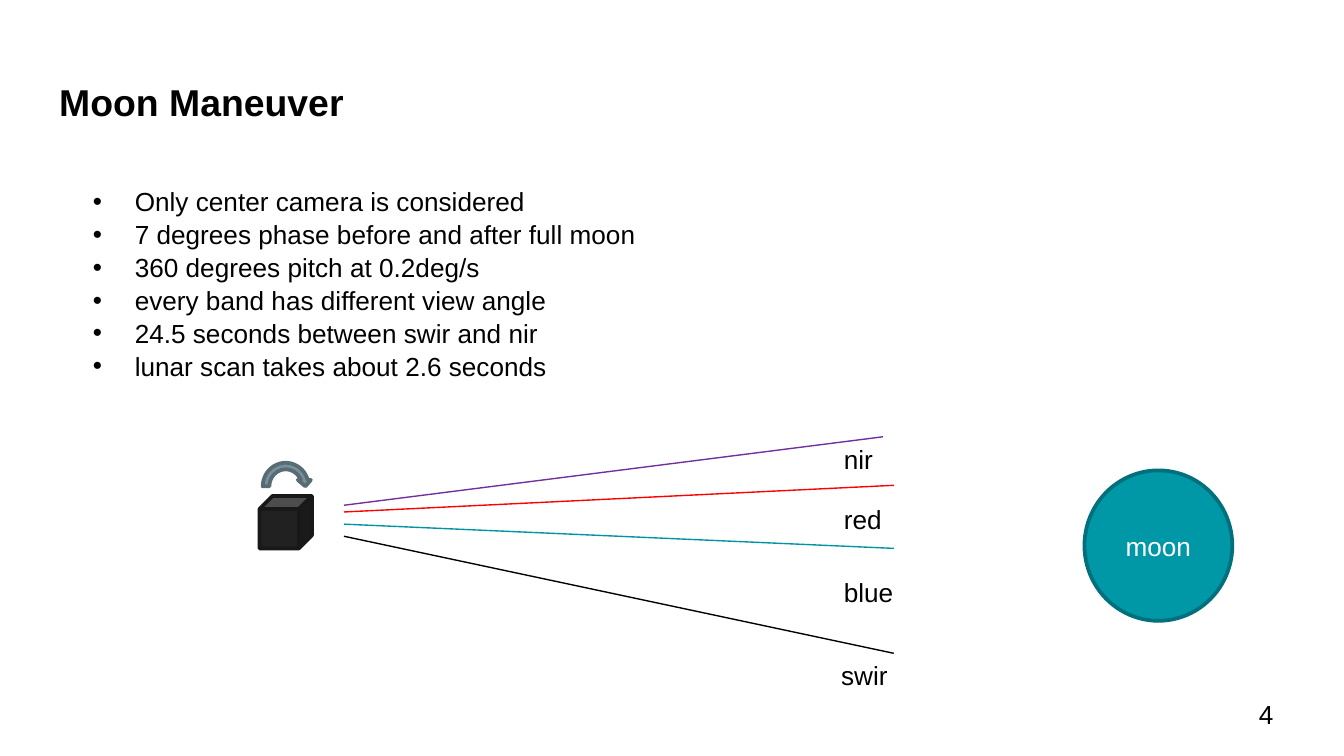
import pptx
import pptx.util
import pptx.dml.color
import pptx.enum.shapes
import pptx.enum.text
import pptx.oxml
import pptx.oxml.ns

Pt = pptx.util.Pt
RGB = pptx.dml.color.RGBColor.from_string
SHAPE = pptx.enum.shapes.MSO_SHAPE
ALIGN = pptx.enum.text.PP_ALIGN
ANCHOR = pptx.enum.text.MSO_ANCHOR

# Content: positions are (left, top, width, height) in points
COLORS = {
    "black": "000000", "white": "FFFFFF",
    "moon": "0097A7", "moon_edge": "00707C",
    "camera": "212121", "camera_edge": "181818",
    "turn": "78909C", "turn_edge": "596B73",
    "nir": "7030A0", "red": "FF0000", "blue": "0094A3", "swir": "000000",
}
TITLE = "Moon Maneuver"
BULLETS = [
    "Only center camera is considered",
    "7 degrees phase before and after full moon",
    "360 degrees pitch at 0.2deg/s",
    "every band has different view angle",
    "24.5 seconds between swir and nir",
    "lunar scan takes about 2.6 seconds",
]
PAGE = "4"
SHAPES = [  # kind, box, colour, text
    (SHAPE.OVAL, (581, 252, 79.2, 80.6), "moon", "moon"),
    (SHAPE.CUBE, (139, 265.7, 28.1, 28.1), "camera", ""),
    (SHAPE.CIRCULAR_ARROW, (139, 246.2, 28.1, 28.8), "turn", ""),
]
RAY_START = 184.3
RAYS = [  # band, start y, end x, end y, label left, label top
    ("nir", 270.7, 473, 234, 445, 234),
    ("red", 274.3, 478.8, 260, 445, 266.4),
    ("blue", 280.8, 478.8, 293.8, 445, 305.3),
    ("swir", 287.3, 478.8, 350, 443.5, 350),
]


def place(sp, box):
    for name, value in zip(("left", "top", "width", "height"), box):
        setattr(sp, name, Pt(value))


def write(sp, lines, size=14, color="black", bold=False, align=ALIGN.LEFT,
          anchor=ANCHOR.TOP, inset=(7.2, 3.6), spacing=1.0):
    tf = sp.text_frame
    x, y = map(Pt, inset)
    frame = {"word_wrap": True, "auto_size": pptx.enum.text.MSO_AUTO_SIZE.NONE,
             "vertical_anchor": anchor, "margin_left": x, "margin_right": x,
             "margin_top": y, "margin_bottom": y}
    for name, value in frame.items():
        setattr(tf, name, value)
    tf.text = "\n".join(lines)
    para = {"alignment": align, "space_before": Pt(0), "space_after": Pt(0),
            "line_spacing": spacing}
    font = {"name": "Arial", "size": Pt(size), "bold": bold}
    for p in tf.paragraphs:
        for name, value in para.items():
            setattr(p, name, value)
        for r in p.runs:
            for name, value in font.items():
                setattr(r.font, name, value)
            r.font.color.rgb = RGB(COLORS[color])


def add_text(s, box, text, **fmt):
    sp = s.shapes.add_textbox(0, 0, 0, 0)
    place(sp, box)
    write(sp, [text], **fmt)


prs = pptx.Presentation()
prs.slide_width, prs.slide_height = Pt(720), Pt(405)
s = prs.slides.add_slide(prs.slide_layouts[1])

# Title and bullet list
title, body = s.placeholders
place(title, (24.5, 35.3, 671, 45.4))
write(title, [TITLE], size=20, bold=True, inset=(7.2, 7.2))
place(body, (42.5, 95, 306, 143.3))
write(body, BULLETS, spacing=1.05)
for p in body.text_frame.paragraphs:
    pPr = p._p.get_or_add_pPr()
    pPr.set("marL", str(Pt(22.5)))
    pPr.set("indent", str(-Pt(22.5)))
    bullet = pptx.oxml.ns.qn("a:buChar")
    pPr.append(pptx.oxml.parse_xml(
        f'<a:buFont {pptx.oxml.ns.nsdecls("a")} typeface="Arial"/>'))
    pPr.makeelement(bullet)
    pPr.append(pptx.oxml.parse_xml(
        f'<a:buChar {pptx.oxml.ns.nsdecls("a")} char="•"/>'))

# Page number
add_text(s, (667.4, 367.2, 43.2, 31), PAGE, anchor=ANCHOR.MIDDLE,
         inset=(7.2, 7.2))

# Moon, camera and turning arrow
for kind, box, color, text in SHAPES:
    sp = s.shapes.add_shape(kind, 0, 0, 0, 0)
    place(sp, box)
    sp.shadow.inherit = False
    sp.fill.solid()
    sp.fill.fore_color.rgb = RGB(COLORS[color])
    sp.line.color.rgb = RGB(COLORS[color + "_edge"])
    sp.line.width = Pt(2)
    if text:
        write(sp, [text], color="white", align=ALIGN.CENTER,
              anchor=ANCHOR.MIDDLE)

# View rays with band labels
for band, y1, x2, y2, left, top in RAYS:
    ray = s.shapes.add_connector(pptx.enum.shapes.MSO_CONNECTOR.STRAIGHT,
                                 Pt(RAY_START), Pt(y1), Pt(x2), Pt(y2))
    ray.line.color.rgb = RGB(COLORS[band])
    ray.line.width = Pt(0.75)
    ray._element.spPr.append(pptx.oxml.parse_xml(
        f'<a:effectLst {pptx.oxml.ns.nsdecls("a")}/>'))
    add_text(s, (left, top, 45.4, 24.5), band)

prs.save("out.pptx")
